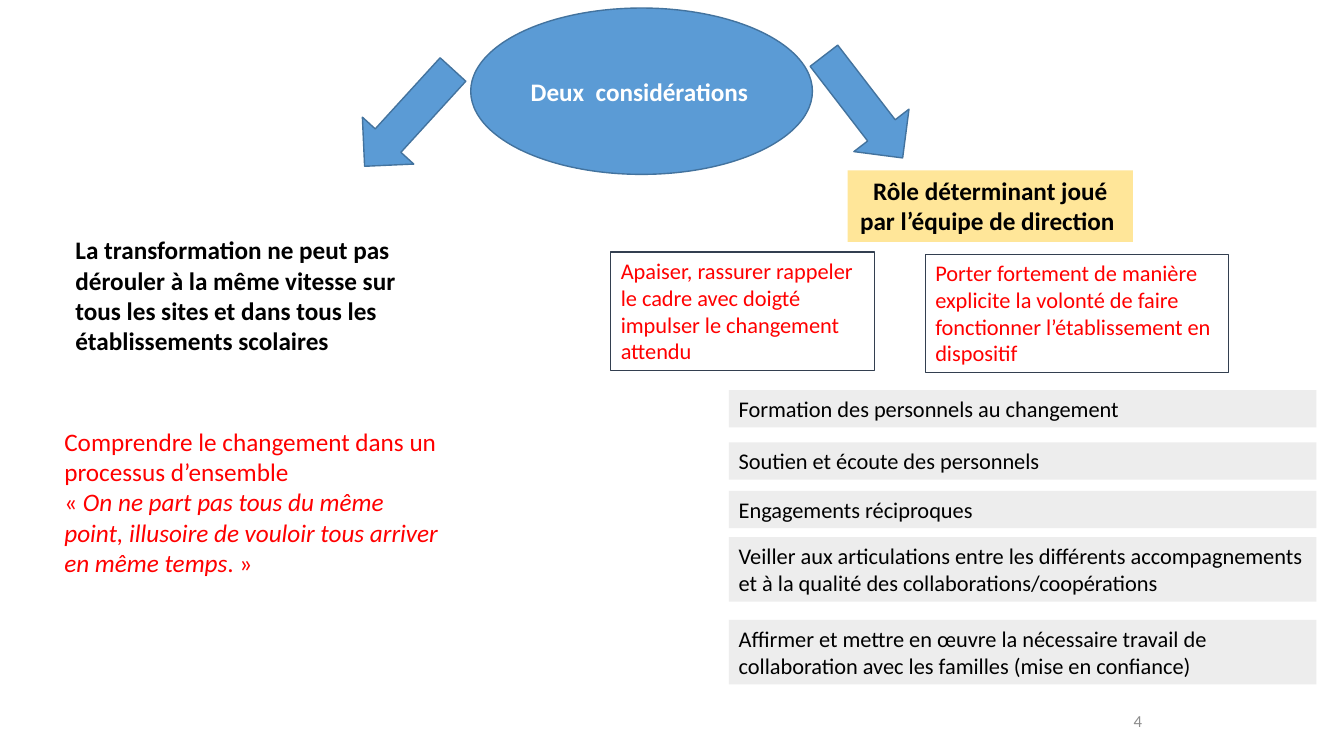
from dataclasses import dataclass
from typing import Optional

import pptx
import pptx.dml.color
import pptx.enum.shapes
import pptx.enum.text
import pptx.util

SHAPE = pptx.enum.shapes.MSO_SHAPE
ALIGN = pptx.enum.text.PP_ALIGN
ANCHOR = pptx.enum.text.MSO_ANCHOR
FIT = pptx.enum.text.MSO_AUTO_SIZE

COLUMNS, ROWS = 40, 22.5
CELL = pptx.util.Inches(13.333) / COLUMNS

BLUE, DARK_BLUE, SLATE = "5B9BD5", "43739E", "333F50"
GOLD, PALE_GREY, GREY = "FFE699", "EDEDED", "8C8C8C"
RED, BLACK, WHITE = "FF0000", "000000", "FFFFFF"


@dataclass
class Box:
    column: float
    row: float
    columns: float
    rows: float
    paragraphs: tuple[str, ...] = ()
    size: float = 18
    color: str = BLACK
    bold: bool = False
    align: ALIGN = ALIGN.LEFT
    anchor: ANCHOR = ANCHOR.TOP
    fit: FIT = FIT.SHAPE_TO_FIT_TEXT
    geometry: Optional[SHAPE] = None
    fill: Optional[str] = None
    line: Optional[str] = None
    line_width: float = 1
    rotation: float = 0


def rgb(value: str) -> pptx.dml.color.RGBColor:
    return pptx.dml.color.RGBColor.from_string(value)


def write_text(text_frame, box: Box) -> None:
    text_frame.word_wrap = True
    text_frame.auto_size = box.fit
    text_frame.vertical_anchor = box.anchor
    for index, text in enumerate(box.paragraphs):
        paragraph = text_frame.add_paragraph() if index else text_frame.paragraphs[0]
        paragraph.alignment = box.align
        paragraph.font.name = "Calibri"
        paragraph.font.size = pptx.util.Pt(box.size)
        paragraph.font.bold = box.bold
        paragraph.font.color.rgb = rgb(box.color)
        for position, part in enumerate(text.split("*")):
            run = paragraph.add_run()
            run.text = part
            if position % 2:
                run.font.italic = True


def draw_box(slide, box: Box) -> None:
    place = [round(cells * CELL) for cells in (box.column, box.row, box.columns, box.rows)]
    if box.geometry is None:
        shape = slide.shapes.add_textbox(*place)
    else:
        shape = slide.shapes.add_shape(box.geometry, *place)
        shape.shadow.inherit = False
        shape.rotation = box.rotation
        if box.fill:
            shape.fill.solid()
            shape.fill.fore_color.rgb = rgb(box.fill)
        else:
            shape.fill.background()
        if box.line:
            shape.line.color.rgb = rgb(box.line)
            shape.line.width = pptx.util.Pt(box.line_width)
        else:
            shape.line.fill.background()
    if box.paragraphs:
        write_text(shape.text_frame, box)


def arrow(column: float, row: float, rows: float, rotation: float) -> Box:
    return Box(column, row, 2.07, rows, geometry=SHAPE.DOWN_ARROW, fill=BLUE,
               line=DARK_BLUE, rotation=rotation)


def role(column: float, row: float, columns: float, *paragraphs: str) -> Box:
    return Box(column, row, columns, 3.54, paragraphs, size=16, color=RED,
               geometry=SHAPE.RECTANGLE, line=SLATE, line_width=0.75)


def action(row: float, rows: float, text: str) -> Box:
    return Box(21.69, row, 17.49, rows, (text,), size=16,
               geometry=SHAPE.RECTANGLE, fill=PALE_GREY)


BOXES = (
    Box(27.54, 20.85, 6.75, 1.2, ("4",), size=12, color=GREY, align=ALIGN.RIGHT,
        anchor=ANCHOR.MIDDLE, fit=FIT.NONE),
    Box(14.01, 0.24, 10.17, 4.95, ("Deux  considérations",), color=WHITE, bold=True,
        anchor=ANCHOR.MIDDLE, fit=FIT.NONE, geometry=SHAPE.OVAL, fill=BLUE, line=DARK_BLUE),
    arrow(11.13, 1.56, 3.9, 42.4),
    arrow(24.66, 1.26, 3.84, 322.4),
    Box(1.95, 6.84, 11.34, 3.93,
        ("La transformation ne peut pas dérouler à la même vitesse sur tous les sites "
         "et dans tous les établissements scolaires",), bold=True),
    Box(1.62, 12.54, 11.97, 4.86,
        ("Comprendre le changement dans un processus d’ensemble",
         "« *On ne part pas tous du même point, illusoire de vouloir tous arriver "
         "en même temps*. »"), color=RED),
    Box(25.23, 5.07, 8.49, 2.13, ("Rôle déterminant joué par l’équipe de direction ",),
        bold=True, align=ALIGN.CENTER, geometry=SHAPE.RECTANGLE, fill=GOLD),
    role(18.18, 7.5, 7.86, "Apaiser, rassurer rappeler le cadre avec doigté",
         "impulser le changement attendu"),
    role(27.54, 7.56, 9.03, "Porter fortement de manière explicite la volonté de faire "
         "fonctionner l’établissement en dispositif"),
    action(11.61, 1.11, "Formation des personnels au changement"),
    action(13.17, 1.11, "Soutien et écoute des personnels"),
    action(14.61, 1.11, "Engagements réciproques"),
    action(15.99, 1.92, "Veiller aux articulations entre les différents accompagnements "
           "et à la qualité des collaborations/coopérations"),
    action(18.45, 1.92, "Affirmer et mettre en œuvre la nécessaire travail de "
           "collaboration avec les familles (mise en confiance)"),
)


def main() -> None:
    presentation = pptx.Presentation()
    presentation.slide_width = round(COLUMNS * CELL)
    presentation.slide_height = round(ROWS * CELL)
    slide = presentation.slides.add_slide(presentation.slide_layouts[6])
    for box in BOXES:
        draw_box(slide, box)
    presentation.save("out.pptx")


if __name__ == "__main__":
    main()
